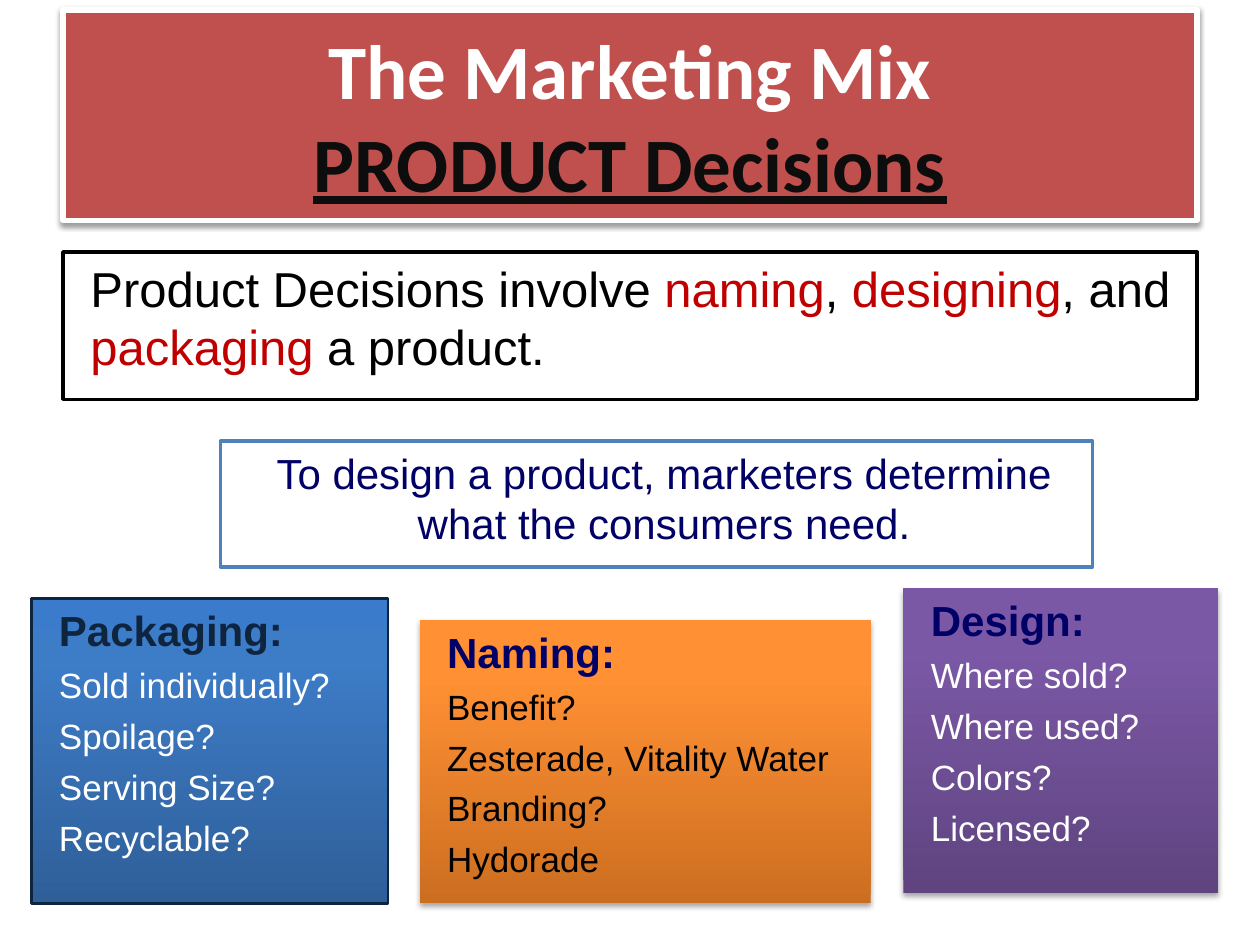
from copy import deepcopy
from dataclasses import dataclass
from lxml.etree import SubElement as Sub
from pptx import Presentation
from pptx.dml.color import RGBColor as RGB
from pptx.enum.shapes import MSO_SHAPE as Kind
from pptx.enum.text import MSO_ANCHOR as Anchor, PP_ALIGN as Align
from pptx.oxml.ns import qn
from pptx.util import Inches, Pt

HUES = {
    "white": "FFFFFF", "black": "000000", "ink": "0D0D0D", "brick": "C0504D",
    "red": "C00000", "blue": "4F81BD", "navy": "000066", "dusk": "0F243E",
}


@dataclass
class Card:
    """A gradient card with a heading and its questions."""
    at: tuple
    shades: tuple
    head: str
    items: tuple
    tint: str = "navy"
    text: str = "white"
    edge: str = ""


CARDS = (
    Card((0.25, 4.75, 2.83, 2.42), ("2F5F99", "3D7CC7", "3A7CCB"), "Packaging:",
         ("Sold individually?", "Spoilage?", "Serving Size?", "Recyclable?"),
         tint="dusk", edge="dusk"),
    Card((3.33, 4.92, 3.58, 2.25), ("CC6E20", "FF9034", "FF9136"), "Naming:",
         ("Benefit?", "Zesterade, Vitality Water", "Branding?", "Hydorade"),
         text="black"),
    Card((7.17, 4.67, 2.5, 2.42), ("5F4480", "7B58A6", "7C57A8"), "Design:",
         ("Where sold?", "Where used?", "Colors?", "Licensed?")),
)


def hue(name: str) -> RGB:
    """Look up a named colour."""
    return RGB.from_string(HUES[name])


def add_box(slide, at: tuple, fill: str = "", edge: str = "", width: float = 2):
    """Add a rectangle with an optional fill and outline."""
    box = slide.shapes.add_shape(Kind.RECTANGLE, *map(Inches, at))
    box.shadow.inherit = False
    if fill:
        box.fill.solid()
        box.fill.fore_color.rgb = hue(fill)
    if edge:
        box.line.color.rgb = hue(edge)
        box.line.width = Pt(width)
    else:
        box.line.fill.background()
    box.text_frame.word_wrap = True
    box.text_frame.vertical_anchor = Anchor.TOP
    return box


def add_glow(box, alpha: int, dist: float) -> None:
    """Cast a soft shadow below a box."""
    fx = box._element.spPr.find(qn("a:effectLst"))
    cast = Sub(fx, qn("a:outerShdw"), blurRad=str(Pt(3.1)), dist=str(Pt(dist)),
               dir="5400000", rotWithShape="0")
    tone = Sub(cast, qn("a:srgbClr"), val=HUES["black"])
    Sub(tone, qn("a:alpha"), val=str(alpha * 1000))


def add_fade(box, shades: tuple) -> None:
    """Fill a box with three shades from bottom to top."""
    box.fill.gradient()
    box.fill.gradient_angle = 90
    stops = box._element.spPr.find(".//" + qn("a:gsLst"))
    stops.insert(1, deepcopy(stops[0]))
    for stop, place, shade in zip(box.fill.gradient_stops, (0, 0.8, 1), shades):
        stop.position = place
        stop.color.rgb = RGB.from_string(shade)


def style(para, size: int, tint: str = "", bold: bool = False,
          align=Align.LEFT, inset: float = 0.12, face: str = "Arial") -> None:
    """Set the layout and font of a paragraph."""
    props = para._p.get_or_add_pPr()
    props.set("marL", str(Inches(inset)))
    props.set("indent", "0")
    para.alignment = align
    font = para.font
    font.name, font.size, font.bold = face, Pt(size), bold
    if tint:
        font.color.rgb = hue(tint)


def add_run(para, text: str, tint: str):
    """Add a coloured run."""
    run = para.add_run()
    run.text = text
    run.font.color.rgb = hue(tint)
    return run


def add_title(slide) -> None:
    """Draw the two-line title banner."""
    box = add_box(slide, (0.5, 0.08, 9, 1.67), "brick", "white", 3)
    add_glow(box, 38, 1.6)
    box.text_frame.vertical_anchor = Anchor.MIDDLE
    para = box.text_frame.paragraphs[0]
    style(para, 44, bold=True, align=Align.CENTER, inset=0, face="Calibri")
    add_run(para, "The Marketing Mix", "white")
    para.add_line_break()
    add_run(para, "PRODUCT Decisions", "ink").font.underline = True


def add_intro(slide) -> None:
    """Draw the two statement boxes."""
    para = add_box(slide, (0.5, 2, 9, 1.17), "white", "black").text_frame.paragraphs[0]
    style(para, 28)
    parts = ("Product Decisions involve ", "naming", ", ", "designing", ", and ",
             "packaging", " a product.")
    for i, part in enumerate(parts):
        add_run(para, part, "red" if i % 2 else "black")
    para = add_box(slide, (1.75, 3.5, 6.92, 1), "white", "blue").text_frame.paragraphs[0]
    para.text = "To design a product, marketers determine what the consumers need."
    style(para, 24, "navy", align=Align.CENTER)


def add_card(slide, card: Card) -> None:
    """Draw a card with its heading and questions."""
    box = add_box(slide, card.at, edge=card.edge, width=1.5)
    add_fade(box, card.shades)
    if not card.edge:
        add_glow(box, 35, 1.8)
    frame = box.text_frame
    head = frame.paragraphs[0]
    head.text = card.head
    style(head, 24, card.tint, bold=True)
    for item in card.items:
        para = frame.add_paragraph()
        para.text = item
        style(para, 20, card.text)
        para.space_before = Pt(5)


def main() -> None:
    """Build and save the slide."""
    deck = Presentation()
    deck.slide_width, deck.slide_height = Inches(10), Inches(7.5)
    slide = deck.slides.add_slide(deck.slide_layouts[6])
    add_title(slide)
    add_intro(slide)
    for card in CARDS:
        add_card(slide, card)
    deck.save("out.pptx")


if __name__ == "__main__":
    main()
